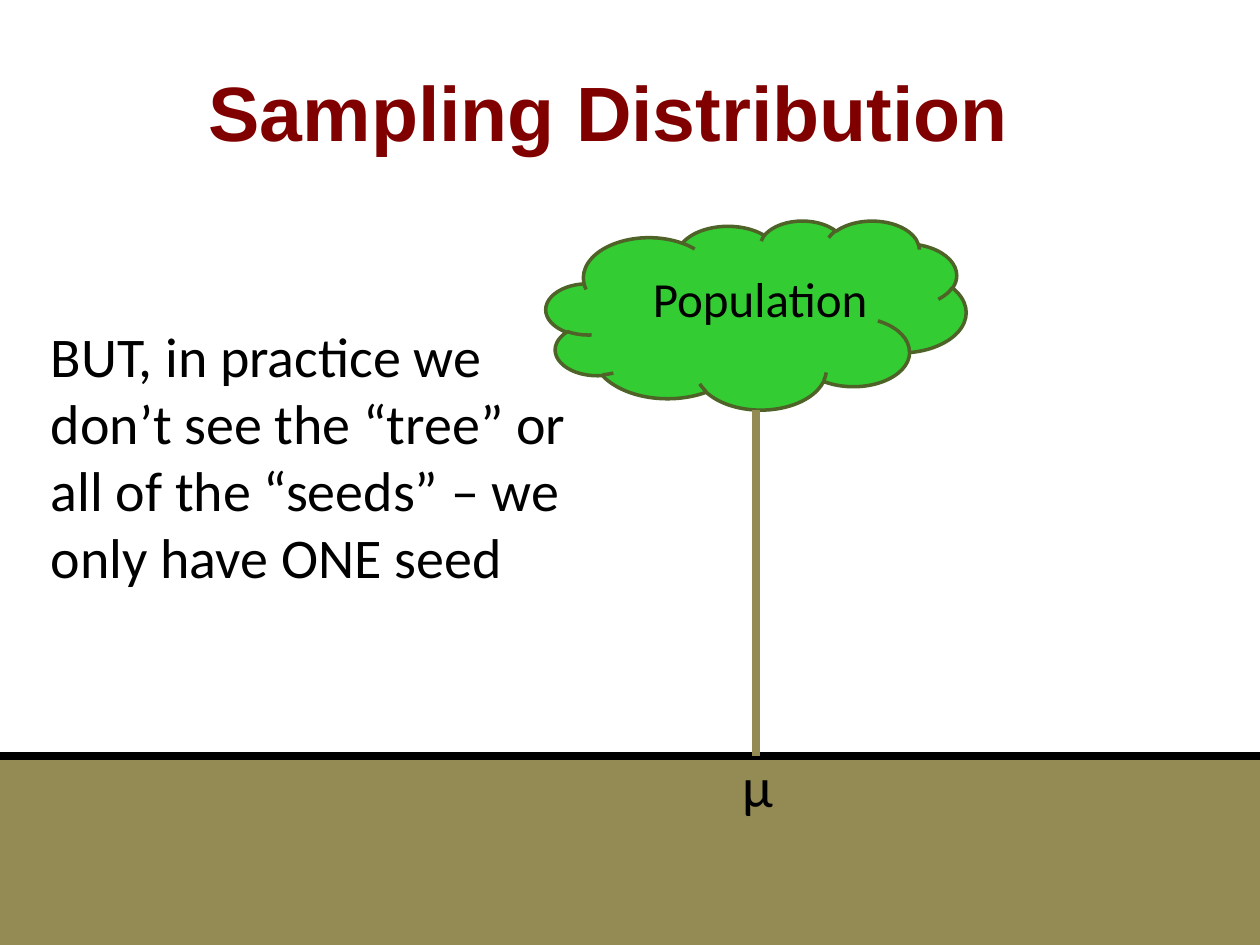
from dataclasses import dataclass

from lxml.etree import SubElement
from pptx import Presentation
from pptx.dml.color import RGBColor
from pptx.enum.shapes import MSO_CONNECTOR, MSO_SHAPE
from pptx.enum.text import MSO_ANCHOR as Anchor, MSO_AUTO_SIZE, PP_ALIGN as Align
from pptx.oxml.ns import qn
from pptx.util import Pt

BLACK = RGBColor(0x00, 0x00, 0x00)
MAROON = RGBColor(0x80, 0x00, 0x00)
EARTH = RGBColor(0x94, 0x8A, 0x54)
LEAF = RGBColor(0x33, 0xCC, 0x33)
LEAF_EDGE = RGBColor(0x4F, 0x62, 0x28)

SLIDE_W, SLIDE_H = 720, 540
GROUND_Y = 432
TRUNK_X, CROWN_BOTTOM = 432, 234


@dataclass(frozen=True)
class Box:
    """Left, top, width and height in points."""
    left: float
    top: float
    width: float
    height: float

    def lengths(self) -> tuple:
        return Pt(self.left), Pt(self.top), Pt(self.width), Pt(self.height)


@dataclass(frozen=True)
class Stroke:
    """A straight line between two points."""
    x1: float
    y1: float
    x2: float
    y2: float
    color: RGBColor


def add_filled(slide, preset, box: Box, fill: RGBColor, edge: RGBColor | None = None) -> None:
    shape = slide.shapes.add_shape(preset, *box.lengths())
    shape.shadow.inherit = False
    shape.fill.solid()
    shape.fill.fore_color.rgb = fill
    if edge is None:
        shape.line.fill.background()
    else:
        shape.line.color.rgb = edge
        shape.line.width = Pt(2)


def add_stroke(slide, stroke: Stroke) -> None:
    line = slide.shapes.add_connector(
        MSO_CONNECTOR.STRAIGHT,
        Pt(stroke.x1), Pt(stroke.y1), Pt(stroke.x2), Pt(stroke.y2))
    line.line.color.rgb = stroke.color
    line.line.width = Pt(4.5)
    SubElement(line._element.spPr, qn("a:effectLst"))


def add_text(slide, text: str, box: Box, *, size: float = 32, font: str = "Calibri",
             color: RGBColor = BLACK, bold: bool = False,
             align: Align = Align.LEFT, anchor: Anchor = Anchor.TOP) -> None:
    frame = slide.shapes.add_textbox(*box.lengths()).text_frame
    frame.word_wrap = True
    frame.auto_size = MSO_AUTO_SIZE.NONE
    frame.vertical_anchor = anchor
    paragraph = frame.paragraphs[0]
    paragraph.alignment = align
    run = paragraph.add_run()
    run.text = text
    run.font.size = Pt(size)
    run.font.name = font
    run.font.bold = bold
    run.font.color.rgb = color


def main() -> None:
    prs = Presentation()
    prs.slide_width, prs.slide_height = Pt(SLIDE_W), Pt(SLIDE_H)
    slide = prs.slides.add_slide(prs.slide_layouts[6])

    ground = Box(0, GROUND_Y, SLIDE_W, SLIDE_H - GROUND_Y)
    crown = Box(312, 126, 240, CROWN_BOTTOM - 126)
    surface = Stroke(0, GROUND_Y, SLIDE_W, GROUND_Y, BLACK)
    trunk = Stroke(TRUNK_X, CROWN_BOTTOM, TRUNK_X, GROUND_Y, EARTH)

    add_filled(slide, MSO_SHAPE.RECTANGLE, ground, EARTH)
    add_text(slide, "Sampling Distribution", Box(24, 18, 648, 90), size=44, font="Arial",
             color=MAROON, bold=True, align=Align.CENTER, anchor=Anchor.MIDDLE)
    add_stroke(slide, surface)
    add_filled(slide, MSO_SHAPE.CLOUD, crown, LEAF, LEAF_EDGE)
    add_text(slide, "Population", Box(366, 150, 144, 41), size=28)
    add_stroke(slide, trunk)
    add_text(slide, "µ", Box(417, 426, 42, 46))
    add_text(slide, "BUT, in practice we don’t see the “tree” or all of the “seeds” – "
                    "we only have ONE seed", Box(22, 180, 318, 163))

    prs.save("out.pptx")


if __name__ == "__main__":
    main()
